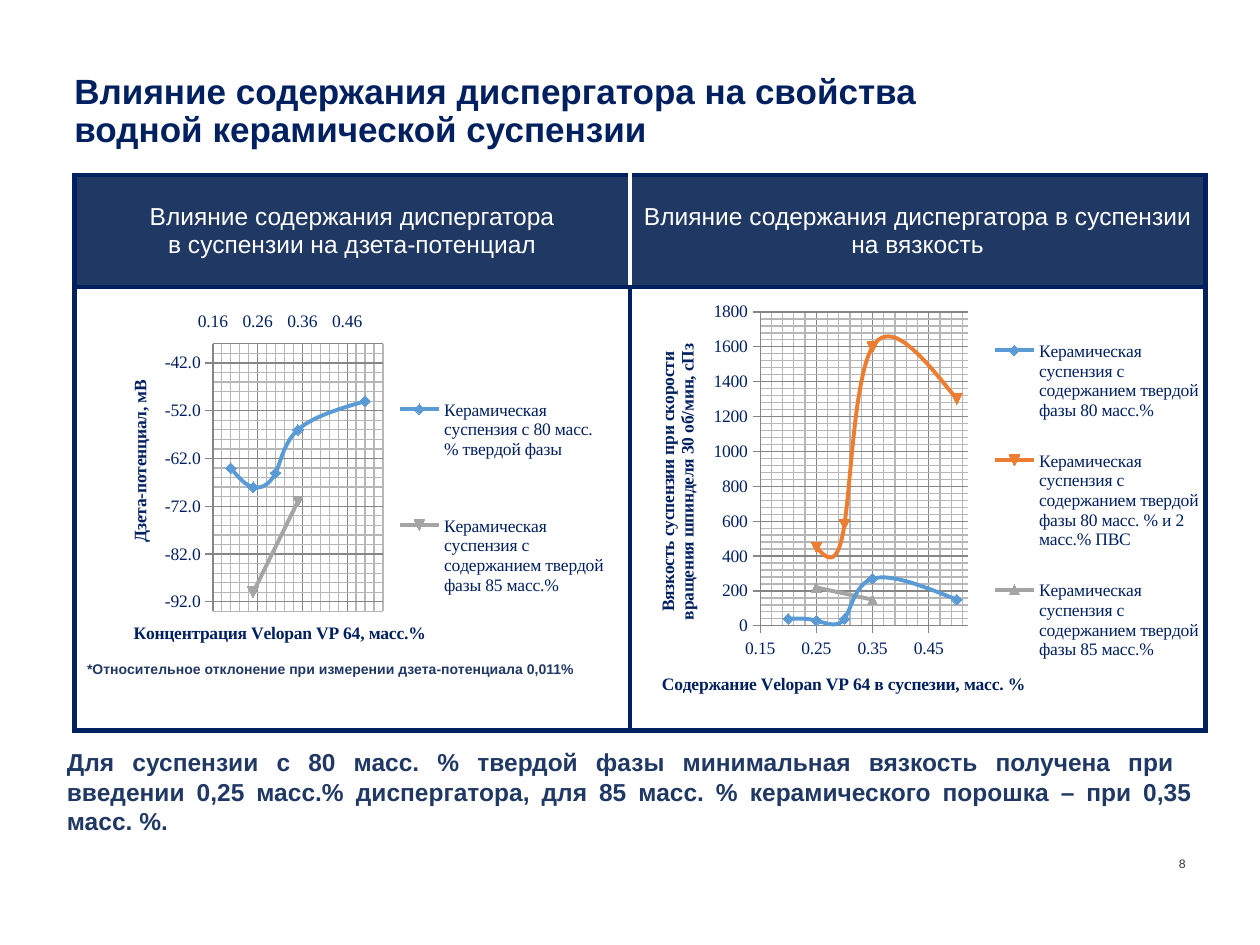
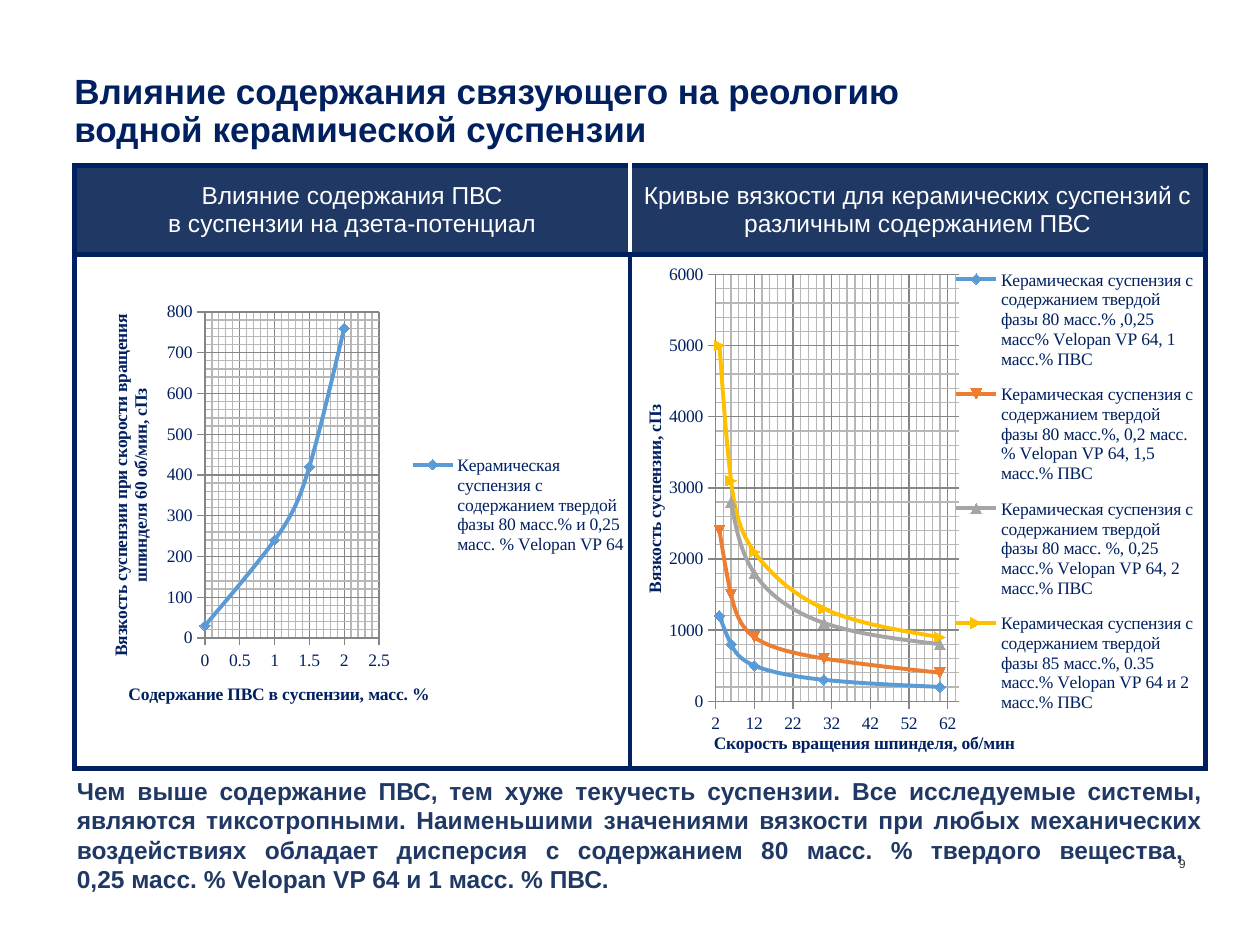
from lxml import etree
from pptx import Presentation
from pptx.chart.data import XyChartData
from pptx.dml.color import RGBColor
from pptx.enum import chart as ch, text as t
from pptx.oxml import parse_xml
from pptx.oxml.ns import nsdecls, qn
from pptx.util import Cm, Pt

NAVY, BAND, WHITE, GREY = "002060", "203864", "FFFFFF", "868686"
BLUE, ORANGE, SILVER, YELLOW = "5B9BD5", "ED7D31", "A5A5A5", "FFC000"
SANS, SERIF = "Arial", "Times New Roman"
TABLE_LEFT, COLUMNS = 1.5, (11.2, 11.6)
SPEEDS = (60, 30, 12, 6, 3)
SOLID = "Керамическая суспензия с содержанием твердой фазы "
BESIDE, ABOVE = ch.XL_TICK_LABEL_POSITION.NEXT_TO_AXIS, ch.XL_TICK_LABEL_POSITION.HIGH

zeta = dict(
    box=(2.11, 6.12, 10.39, 7.39), plot=(.21, .11, .33, .73), legend=(.57, .11, .4, .84),
    x=("Концентрация Velopan VP 64, масс.%", (.05, .86), .16, .54, .1, "General", ABOVE),
    y=("Дзета-потенциал, мВ", (.04, .2), -94, -38, 10, "0.0", BESIDE),
    series=[("Керамическая суспензия с 80 масс.% твердой фазы", BLUE,
             (.2, .25, .3, .35, .5), (-64, -68, -65, -56, -50)),
            (SOLID + "85 масс.%", SILVER, (.25, .35), (-90, -71))])
viscosity = dict(
    box=(12.7, 5.92, 11.61, 8.61), plot=(.226, .043, .361, .735), legend=(.62, .04, .38, .89),
    x=("Содержание Velopan VP 64 в суспезии, масс. %", (.05, .88),
       .15, .52, .1, "General", BESIDE),
    y=("Вязкость суспензии при скорости вращения шпинделя 30 об/мин, сПз",
       (.04, .11), 0, 1800, 200, "General", BESIDE),
    series=[(SOLID + "80 масс.%", BLUE, (.2, .25, .3, .35, .5), (40, 30, 40, 270, 150)),
            (SOLID + "80 масс. % и 2 масс.% ПВС", ORANGE,
             (.25, .3, .35, .5), (450, 580, 1600, 1300)),
            (SOLID + "85 масс.%", SILVER, (.25, .35), (220, 150))])
binder = dict(
    box=(1.7, 5.92, 11, 8.79), plot=(.221, .042, .319, .748), legend=(.59, .24, .41, .49),
    x=("Содержание ПВС в суспензии, масс. %", (.075, .885), 0, 2.5, .5, "General", BESIDE),
    y=("Вязкость суспензии при скорости вращения шпинделя 60 об/мин, сПз",
       (.04, .04), 0, 800, 100, "General", BESIDE),
    series=[(SOLID + "80 масс.% и 0,25 масс. % Velopan VP 64", BLUE,
             (0, 1, 1.5, 2), (30, 240, 420, 760))])
flow = dict(
    box=(12.9, 5.13, 11.4, 10.39), plot=(.134, .039, .431, .828), legend=(.58, 0, .42, .92),
    x=("Скорость вращения шпинделя, об/мин", (.125, .92), 2, 65, 10, "General", BESIDE),
    y=("Вязкость суспензии, сПз", (0, .285), 0, 6000, 1000, "General", BESIDE),
    series=[(SOLID + "80 масс.% ,0,25 масс% Velopan VP 64, 1 масс.% ПВС", BLUE,
             SPEEDS, (200, 300, 500, 800, 1200)),
            (SOLID + "80 масс.%, 0,2 масс. % Velopan VP 64, 1,5 масс.% ПВС", ORANGE,
             SPEEDS, (400, 600, 900, 1500, 2400)),
            (SOLID + "80 масс. %, 0,25 масс.% Velopan VP 64, 2 масс.% ПВС", SILVER,
             SPEEDS[:4], (800, 1100, 1800, 2800)),
            (SOLID + "85 масс.%, 0.35 масс.% Velopan VP 64 и 2 масс.% ПВС", YELLOW,
             SPEEDS, (900, 1300, 2100, 3100, 5000))])

PAGES = [
    dict(number="8",
         title="Влияние содержания диспергатора на свойства водной керамической суспензии",
         headings=("Влияние содержания диспергатора\vв суспензии на дзета-потенциал",
                   "Влияние содержания диспергатора в суспензии на вязкость"),
         top=3.53, rows=(2.26, 8.94), charts=(zeta, viscosity),
         footnote="*Относительное отклонение при измерении дзета-потенциала 0,011%",
         conclusion="Для суспензии с 80 масс. % твердой фазы минимальная вязкость получена при \v"
                    "введении 0,25 масс.% диспергатора, для 85 масс. % керамического порошка – "
                    "при 0,35 масс. %.",
         conclusion_box=(1.1, 14.94, 23.19, 2.06)),
    dict(number="9",
         title="Влияние содержания связующего на реологию водной керамической суспензии",
         headings=("Влияние содержания ПВС\vв суспензии на дзета-потенциал",
                   "Кривые вязкости для керамических суспензий с различным содержанием ПВС"),
         top=3.33, rows=(1.8, 10.36), charts=(binder, flow), footnote="",
         conclusion="Чем выше содержание ПВС, тем хуже текучесть суспензии. Все исследуемые "
                    "системы, являются тиксотропными. Наименьшими значениями вязкости при любых "
                    "механических воздействиях обладает дисперсия с содержанием 80 масс. % "
                    "твердого вещества, \v0,25 масс. % Velopan VP 64 и 1 масс. % ПВС.",
         conclusion_box=(1.3, 15.52, 23.19, 2.64)),
]


def rgb(value):
    return RGBColor.from_string(value)


def cms(box):
    return [Cm(length) for length in box]


def set_font(font, size, color, bold=False, name=SANS):
    font.size, font.bold, font.name = Pt(size), bold, name
    font.color.rgb = rgb(color)


def write(frame, words, size, color, bold=False, align=t.PP_ALIGN.LEFT):
    frame.word_wrap = True
    frame.text = words
    paragraph = frame.paragraphs[0]
    paragraph.alignment = align
    set_font(paragraph.font, size, color, bold)
    return paragraph


def no_margins(frame):
    frame.margin_left = frame.margin_top = frame.margin_right = frame.margin_bottom = 0


def set_borders(cell, **colors):
    properties = cell._tc.get_or_add_tcPr()
    for index, side in enumerate("LRTB"):
        properties.insert(index, parse_xml(
            f'<a:ln{side} {nsdecls("a")} w="38100"><a:solidFill>'
            f'<a:srgbClr val="{colors.get(side, NAVY)}"/></a:solidFill></a:ln{side}>'))


def place(part, index, box, inner=False):
    for old in part.findall(qn("c:layout")):
        part.remove(old)
    layout = etree.Element(qn("c:layout"))
    manual = etree.SubElement(layout, qn("c:manualLayout"))
    settings = [("layoutTarget", "inner")] if inner else []
    settings += [("xMode", "edge"), ("yMode", "edge"), *zip("xywh", box)]
    for tag, value in settings:
        etree.SubElement(manual, qn("c:" + tag)).set("val", str(value))
    part.insert(index, layout)


def style_axis(axis, title, corner, low, high, step, number_format, labels):
    axis.minimum_scale, axis.maximum_scale = low, high
    axis.major_unit, axis.minor_unit = step, step / 5
    axis.has_major_gridlines = axis.has_minor_gridlines = True
    for line in (axis.format.line, axis.major_gridlines.format.line):
        line.color.rgb, line.width = rgb(GREY), Pt(.75)
    minor = axis._element.find(qn("c:minorGridlines"))
    minor.append(parse_xml(
        f'<c:spPr {nsdecls("c", "a")}><a:ln w="9525"><a:solidFill>'
        '<a:srgbClr val="B7B7B7"/></a:solidFill></a:ln></c:spPr>'))
    axis.major_tick_mark = ch.XL_TICK_MARK.OUTSIDE
    axis.minor_tick_mark = ch.XL_TICK_MARK.NONE
    axis.tick_label_position = labels
    axis.tick_labels.number_format = number_format
    axis.tick_labels.number_format_is_linked = False
    frame = axis.axis_title.text_frame
    frame.text = title
    set_font(frame.paragraphs[0].font, 10, NAVY, True, SERIF)
    place(axis.axis_title._element, 1, corner)


def add_curves(slide, box, plot, legend, x, y, series):
    data = XyChartData()
    for name, _, xs, ys in series:
        curve = data.add_series(name)
        for point in zip(xs, ys):
            curve.add_data_point(*point)
    chart = slide.shapes.add_chart(ch.XL_CHART_TYPE.XY_SCATTER_SMOOTH, *cms(box), data).chart
    set_font(chart.font, 10, NAVY, name=SERIF)
    chart.has_title = False
    style_axis(chart.category_axis, *x)
    style_axis(chart.value_axis, *y)
    chart.value_axis.axis_title._element.find(".//" + qn("a:bodyPr")).set("rot", "-5400000")
    chart.has_legend = True
    chart.legend.position = ch.XL_LEGEND_POSITION.RIGHT
    chart.legend.include_in_layout = False
    place(chart.legend._element, 1, legend)
    place(chart._chartSpace.find(".//" + qn("c:plotArea")), 0, plot, inner=True)
    chart.plots[0].vary_by_categories = False
    for curve, (_, color, _, _) in zip(chart.plots[0].series, series):
        curve._element.get_or_add_smooth().val = True
        curve.format.line.width = Pt(2.25)
        curve.marker.size = 6
        for line in (curve.format.line, curve.marker.format.line):
            line.color.rgb = rgb(color)
        curve.marker.format.fill.solid()
        curve.marker.format.fill.fore_color.rgb = rgb(color)


def add_comparison(slide, page):
    box = cms((TABLE_LEFT, page["top"], sum(COLUMNS), sum(page["rows"])))
    table = slide.shapes.add_table(2, 2, *box).table
    for column, width in zip(table.columns, COLUMNS):
        column.width = Cm(width)
    for row, height in zip(table.rows, page["rows"]):
        row.height = Cm(height)
    for index, heading in enumerate(page["headings"]):
        header, body = table.cell(0, index), table.cell(1, index)
        write(header.text_frame, heading, 14, WHITE, align=t.PP_ALIGN.CENTER)
        header.vertical_anchor = t.MSO_ANCHOR.MIDDLE
        header.fill.solid()
        header.fill.fore_color.rgb = rgb(BAND)
        body.fill.background()
        set_borders(header, **{"RL"[index]: WHITE})
        set_borders(body)
    if page["footnote"]:
        note = table.cell(1, 0)
        note.margin_top = Cm(7.54)
        write(note.text_frame, page["footnote"], 8, BAND, True)


def add_page(prs, page):
    slide = prs.slides.add_slide(prs.slide_layouts[5])
    title = slide.shapes.title
    title.left, title.top, title.width, title.height = cms((1.5, 1.5, 19.2, 1.63))
    no_margins(title.text_frame)
    title.text_frame.vertical_anchor = t.MSO_ANCHOR.TOP
    title.text_frame.auto_size = t.MSO_AUTO_SIZE.NONE
    write(title.text_frame, page["title"], 20, NAVY, True).line_spacing = .9
    add_comparison(slide, page)
    conclusion = slide.shapes.add_textbox(*cms(page["conclusion_box"]))
    write(conclusion.text_frame, page["conclusion"], 14, BAND, True, t.PP_ALIGN.JUSTIFY)
    for chart in page["charts"]:
        add_curves(slide, **chart)
    number = slide.shapes.add_textbox(*cms((22.3, 17.15, 1.6, .4))).text_frame
    no_margins(number)
    number.vertical_anchor = t.MSO_ANCHOR.BOTTOM
    write(number, page["number"], 7, "333333", align=t.PP_ALIGN.RIGHT)


def main():
    prs = Presentation()
    prs.slide_width, prs.slide_height = Cm(25.4), Cm(19.05)
    for page in PAGES:
        add_page(prs, page)
    prs.save("out.pptx")


if __name__ == "__main__":
    main()
